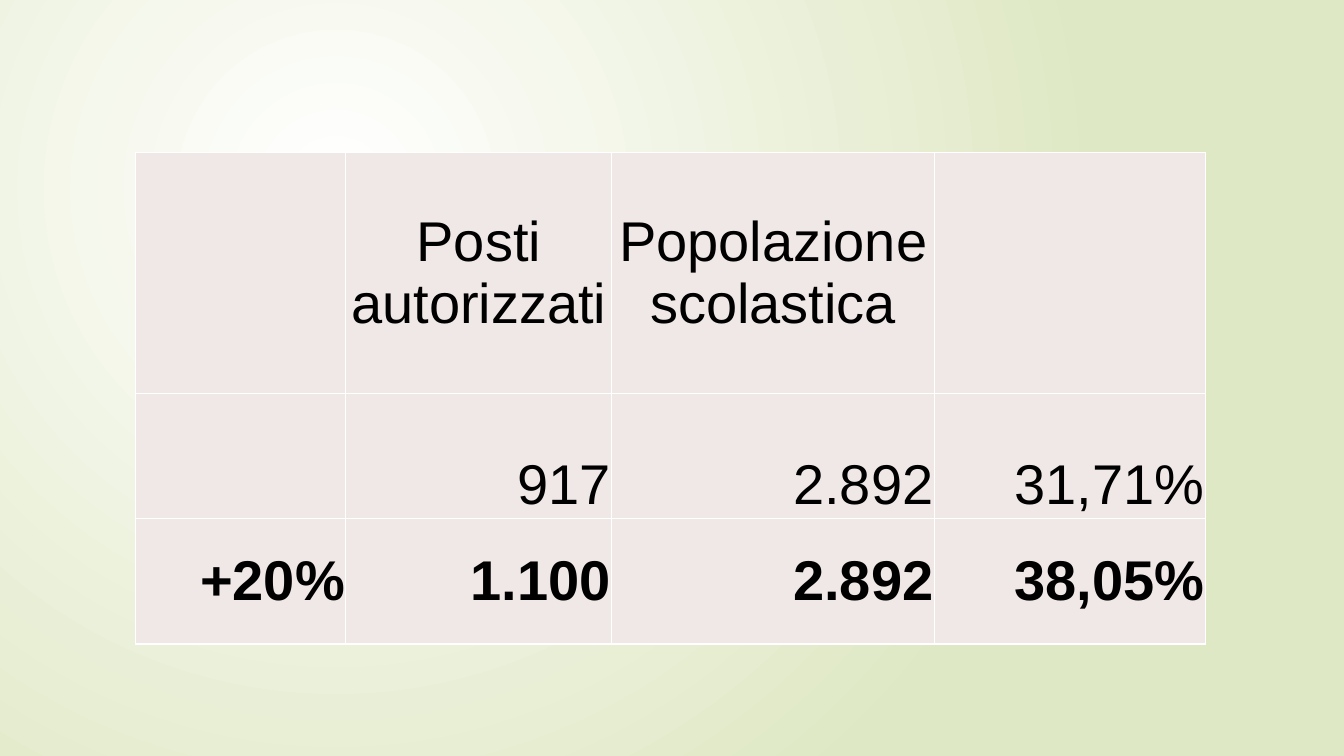
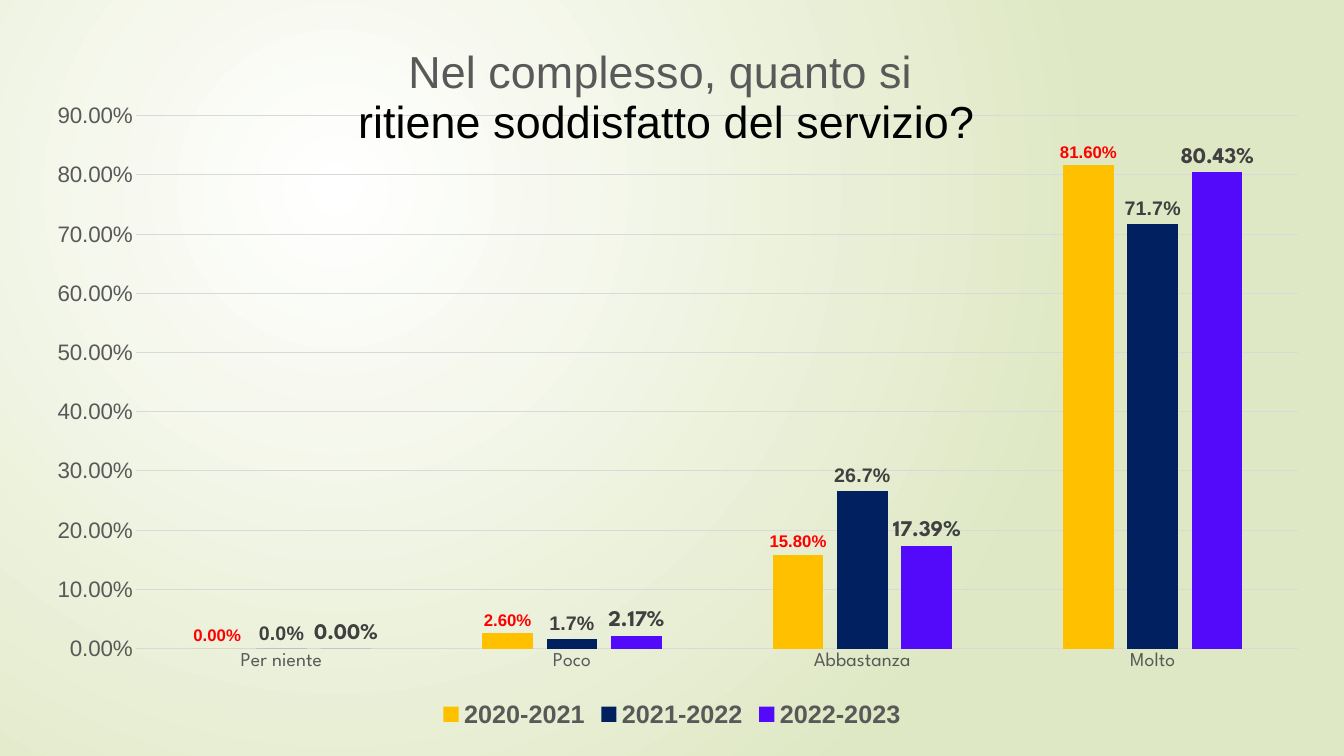
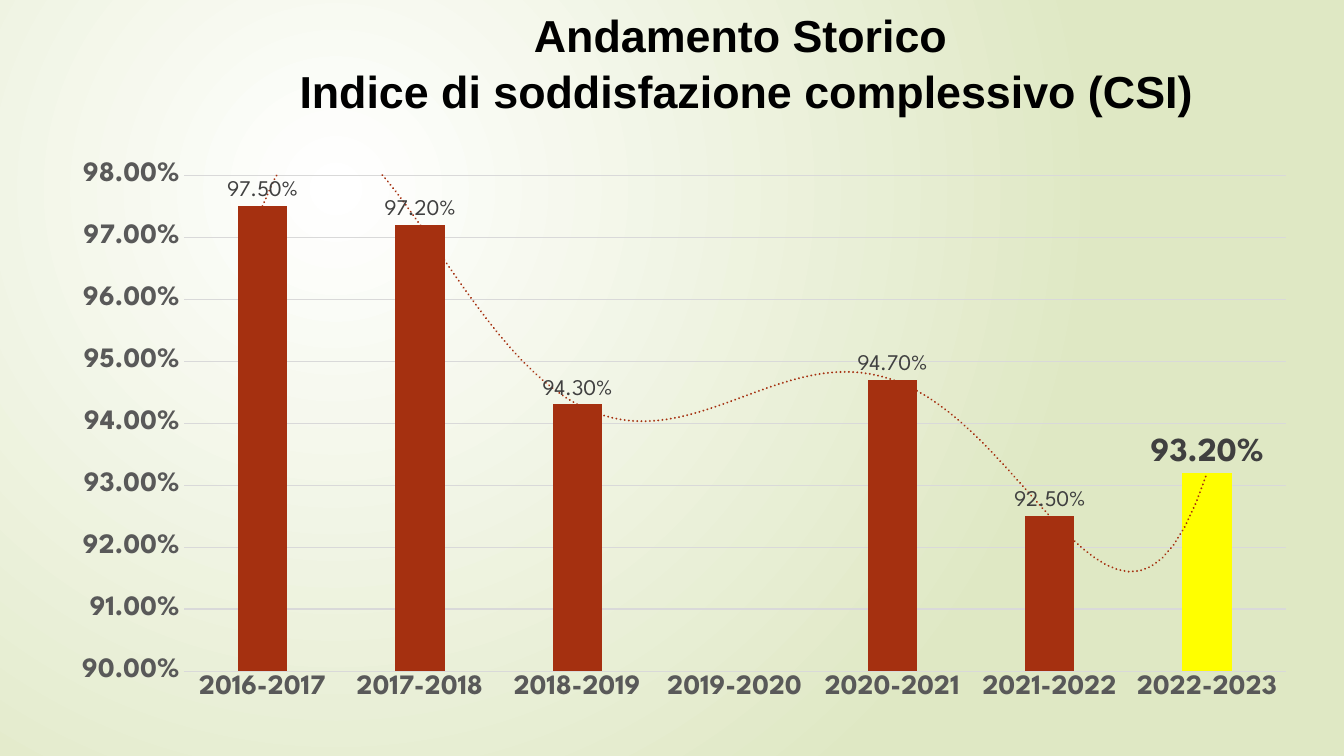
from dataclasses import dataclass

from pptx import Presentation
from pptx.chart.data import CategoryChartData
from pptx.dml.color import RGBColor
from pptx.enum.chart import XL_CHART_TYPE, XL_LABEL_POSITION, XL_LEGEND_POSITION, XL_TICK_MARK
from pptx.enum.text import MSO_ANCHOR, MSO_AUTO_SIZE, PP_ALIGN
from pptx.oxml import parse_xml
from pptx.oxml.ns import nsdecls, qn
from pptx.util import Pt


@dataclass(frozen=True)
class Theme:
    body: str = "Arial"
    display: str = "League Spartan"
    white: str = "FFFFFF"
    green: str = "DFE8C4"
    cell: str = "F0E8E7"
    black: str = "000000"
    axis: str = "595959"
    label: str = "404040"
    grid: str = "D9D9D9"
    amber: str = "FFC000"
    navy: str = "002060"
    violet: str = "540AFA"
    red: str = "FF0000"
    rust: str = "A53010"
    yellow: str = "FFFF00"
    table_size: int = 40
    title_size: int = 32
    highlight_size: int = 24
    trend_size: int = 20
    legend_size: int = 18
    large_size: int = 16
    medium_size: int = 14
    small_size: int = 12
    chart_size: int = 10


theme = Theme()


def style(font, size, color, name, bold=False):
    font.size = Pt(size)
    font.color.rgb = RGBColor.from_string(color)
    font.name = name
    font.bold = bold


def set_layout(holder, index, target="", **fractions):
    for old in holder.findall(qn("c:layout")):
        holder.remove(old)
    values = "".join(f'<c:{key} val="{value}"/>' for key, value in fractions.items())
    holder.insert(index, parse_xml(
        f'<c:layout {nsdecls("c")}><c:manualLayout>{target}'
        f'<c:xMode val="edge"/><c:yMode val="edge"/>{values}</c:manualLayout></c:layout>'))


# Deck and shared background
deck = Presentation()
deck.slide_width, deck.slide_height = Pt(960), Pt(540)
background = deck.slide_master.background.fill
background.gradient()
for stop, color in zip(background.gradient_stops, (theme.white, theme.green)):
    stop.color.rgb = RGBColor.from_string(color)
gradient = deck.slide_master.element.find(".//" + qn("a:gradFill"))
gradient.replace(gradient.find(qn("a:lin")), parse_xml(
    f'<a:path {nsdecls("a")} path="circle">'
    '<a:fillToRect l="50000" t="50000" r="100000" b="100000"/></a:path>'))
table_slide, survey_slide, history_slide = [
    deck.slides.add_slide(deck.slide_layouts[6]) for _ in range(3)]

# Slide 1: table of authorised places
rows = [
    ("", "Posti autorizzati", "Popolazione scolastica", ""),
    ("", "917", "2.892", "31,71%"),
    ("+20%", "1.100", "2.892", "38,05%"),
]
row_styles = [
    (172, PP_ALIGN.CENTER, MSO_ANCHOR.MIDDLE, False),
    (89.5, PP_ALIGN.RIGHT, MSO_ANCHOR.BOTTOM, False),
    (89.5, PP_ALIGN.RIGHT, MSO_ANCHOR.MIDDLE, True),
]
column_widths = (150, 190, 230.4, 193.6)
table = table_slide.shapes.add_table(
    3, 4, Pt(97), Pt(109), Pt(sum(column_widths)), Pt(351)).table
table.first_row = table.horz_banding = False
for column, width in zip(table.columns, column_widths):
    column.width = Pt(width)
for row, texts, (height, align, anchor, bold) in zip(table.rows, rows, row_styles):
    row.height = Pt(height)
    for cell, text in zip(row.cells, texts):
        cell.fill.solid()
        cell.fill.fore_color.rgb = RGBColor.from_string(theme.cell)
        cell.margin_left = cell.margin_right = Pt(0.75)
        cell.margin_top = cell.margin_bottom = Pt(1.5)
        cell.vertical_anchor = anchor
        cell.text_frame.text = text
        para = cell.text_frame.paragraphs[0]
        para.alignment = align
        for span in para.runs:
            style(span.font, theme.table_size, theme.black, theme.body, bold)
        for index, side in enumerate(("lnL", "lnR", "lnT", "lnB")):
            cell._tc.get_or_add_tcPr().insert(index, parse_xml(
                f'<a:{side} {nsdecls("a")} w="{Pt(1)}"><a:solidFill>'
                f'<a:srgbClr val="{theme.white}"/></a:solidFill></a:{side}>'))

# Slide 3: heading above the chart
box = history_slide.shapes.add_textbox(Pt(177), Pt(0), Pt(713), Pt(85))
box.text_frame.word_wrap = True
box.text_frame.auto_size = MSO_AUTO_SIZE.SHAPE_TO_FIT_TEXT
box.text_frame.text = "Andamento Storico \nIndice di soddisfazione complessivo (CSI)"
for para in box.text_frame.paragraphs:
    para.alignment = PP_ALIGN.CENTER
    para.line_spacing = 1.05
    style(para.runs[0].font, theme.title_size, theme.black, theme.body, True)

# Slides 2 and 3: column charts
# Series: name, values, fill, label size, label colour, label font, bold, format
survey_series = [
    ("2020-2021", (0, 0.026, 0.158, 0.816), theme.amber,
     theme.small_size, theme.red, theme.body, True, "0.00%"),
    ("2021-2022", (0, 0.017, 0.267, 0.717), theme.navy,
     theme.medium_size, theme.label, theme.body, True, "0.0%"),
    ("2022-2023", (0, 0.0217, 0.1739, 0.8043), theme.violet,
     theme.large_size, theme.label, theme.display, True, "0.00%"),
]
history_series = [
    ("Series 1", (0.975, 0.972, 0.943, None, 0.947, 0.925, 0.932), theme.rust,
     theme.large_size, theme.label, theme.display, False, "0.00%"),
]
years = [f"{year}-{year + 1}" for year in range(2016, 2023)]
# Chart: slide, frame, categories, series, plot area, scale, axis fonts
chart_plans = [
    (survey_slide, (18, 15, 924, 509), ("Per niente", "Poco", "Abbastanza", "Molto"),
     survey_series, (0.086, 0.133, 0.898, 0.748), (0, 0.9, 0.1),
     (theme.medium_size, theme.axis, theme.display),
     (theme.large_size, theme.axis, theme.body)),
    (history_slide, (31.5, 13.5, 907, 512), years,
     history_series, (0.11, 0.218, 0.868, 0.692), (0.9, 0.98, 0.01),
     (theme.trend_size, theme.axis, theme.display, True),
     (theme.trend_size, theme.axis, theme.display, True)),
]
charts = []
for slide, frame, categories, series_plans, plot_box, scale, category_font, value_font in chart_plans:
    data = CategoryChartData(number_format="0.00%")
    data.categories = categories
    for name, values, *_ in series_plans:
        data.add_series(name, values)
    chart = slide.shapes.add_chart(
        XL_CHART_TYPE.COLUMN_CLUSTERED, *map(Pt, frame), data).chart
    charts.append(chart)
    style(chart.font, theme.chart_size, theme.black, theme.display)
    chart.has_title = chart.has_legend = False

    # Plot area and transparent backgrounds
    plot_area = chart.element.find(".//" + qn("c:plotArea"))
    set_layout(plot_area, 0, '<c:layoutTarget val="inner"/>', **dict(zip("xywh", plot_box)))
    clear = f'<c:spPr {nsdecls("c", "a")}><a:noFill/><a:ln><a:noFill/></a:ln></c:spPr>'
    plot_area.append(parse_xml(clear))
    chart.element.find(qn("c:chart")).addnext(parse_xml(clear))

    # Axes
    for axis, font in ((chart.category_axis, category_font), (chart.value_axis, value_font)):
        axis.major_tick_mark = axis.minor_tick_mark = XL_TICK_MARK.NONE
        style(axis.tick_labels.font, *font)
    value_axis = chart.value_axis
    value_axis.minimum_scale, value_axis.maximum_scale, value_axis.major_unit = scale
    value_axis.tick_labels.number_format = "0.00%"
    value_axis.tick_labels.number_format_is_linked = False
    value_axis.format.line.fill.background()
    for line in (chart.category_axis.format.line, value_axis.major_gridlines.format.line):
        line.color.rgb = RGBColor.from_string(theme.grid)
        line.width = Pt(0.75)

    # Columns and their labels
    plot = chart.plots[0]
    plot.gap_width, plot.overlap = 219, -27
    plot.vary_by_categories = False
    for series, (_, _, fill, size, color, font_name, bold, number_format) in zip(
            plot.series, series_plans):
        series.format.fill.solid()
        series.format.fill.fore_color.rgb = RGBColor.from_string(fill)
        labels = series.data_labels
        labels.show_value = True
        labels.position = XL_LABEL_POSITION.OUTSIDE_END
        labels.number_format = number_format
        labels.number_format_is_linked = False
        style(labels.font, size, color, font_name, bold)

survey_chart, history_chart = charts

# Survey chart title and legend
title_frame = survey_chart.chart_title.text_frame
title_frame.text = "Nel complesso, quanto si \nritiene soddisfatto del servizio?"
for para, color in zip(title_frame.paragraphs, (theme.axis, theme.black)):
    para.alignment = PP_ALIGN.CENTER
    style(para.runs[0].font, theme.title_size, color, theme.body)
set_layout(survey_chart.element.find(".//" + qn("c:title")), 1, x=0.255, y=0.03)
survey_chart.has_legend = True
survey_chart.legend.position = XL_LEGEND_POSITION.BOTTOM
survey_chart.legend.include_in_layout = False
style(survey_chart.legend.font, theme.legend_size, theme.axis, theme.body, True)

# Highlighted latest year and trend line
latest = history_chart.plots[0].series[0].points[6]
latest.format.fill.solid()
latest.format.fill.fore_color.rgb = RGBColor.from_string(theme.yellow)
style(latest.data_label.font, theme.highlight_size, theme.label, theme.display, True)
latest.data_label.position = XL_LABEL_POSITION.OUTSIDE_END
history_chart.element.find(".//" + qn("c:ser")).find(qn("c:cat")).addprevious(parse_xml(
    f'<c:trendline {nsdecls("c", "a")}><c:spPr><a:ln w="{Pt(1.5)}" cap="rnd"><a:solidFill>'
    f'<a:srgbClr val="{theme.rust}"/></a:solidFill><a:prstDash val="sysDot"/></a:ln></c:spPr>'
    '<c:trendlineType val="poly"/><c:order val="5"/>'
    '<c:dispRSqr val="0"/><c:dispEq val="0"/></c:trendline>'))

deck.save("out.pptx")
